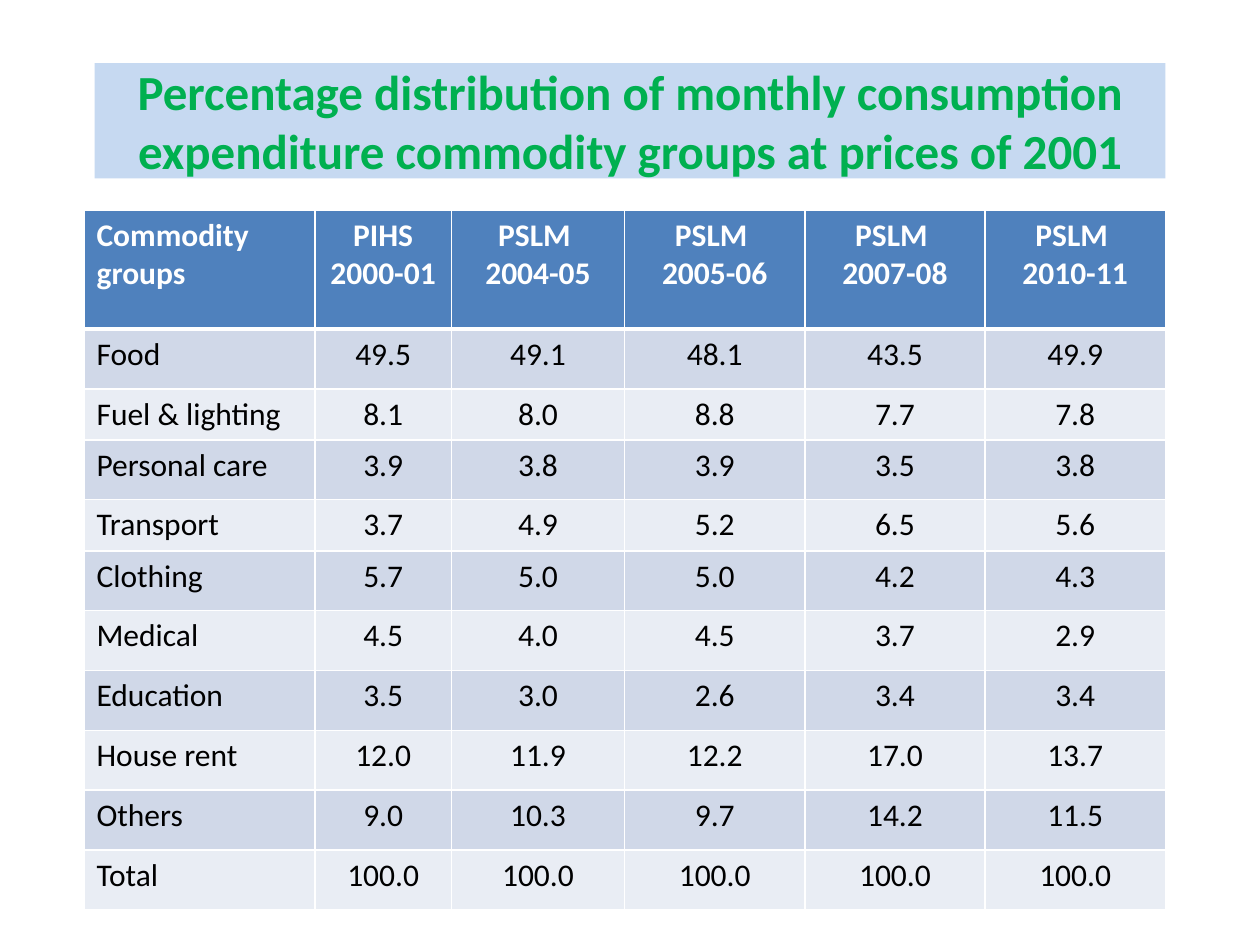
from lxml.etree import fromstring
from pptx import Presentation
from pptx.dml.color import RGBColor
from pptx.enum.text import MSO_ANCHOR, MSO_AUTO_SIZE, PP_ALIGN
from pptx.oxml.ns import nsdecls
from pptx.util import Pt

# Content
TITLE = ("Percentage distribution of monthly consumption "
         "expenditure commodity groups at prices of 2001")
HEADER = ["Commodity groups", "PIHS 2000-01", "PSLM \n2004-05",
          "PSLM \n2005-06", "PSLM \n2007-08", "PSLM \n2010-11"]
SHARES = [
    ("Food", 49.5, 49.1, 48.1, 43.5, 49.9),
    ("Fuel & lighting", 8.1, 8.0, 8.8, 7.7, 7.8),
    ("Personal care", 3.9, 3.8, 3.9, 3.5, 3.8),
    ("Transport", 3.7, 4.9, 5.2, 6.5, 5.6),
    ("Clothing", 5.7, 5.0, 5.0, 4.2, 4.3),
    ("Medical", 4.5, 4.0, 4.5, 3.7, 2.9),
    ("Education", 3.5, 3.0, 2.6, 3.4, 3.4),
    ("House rent", 12.0, 11.9, 12.2, 17.0, 13.7),
    ("Others", 9.0, 10.3, 9.7, 14.2, 11.5),
    ("Total", 100.0, 100.0, 100.0, 100.0, 100.0),
]

# Format, lengths in points
FONT = "Calibri"
WHITE = RGBColor(0xFF, 0xFF, 0xFF)
BLACK = RGBColor(0x00, 0x00, 0x00)
GREEN = RGBColor(0x00, 0xB0, 0x50)
TITLE_FILL = RGBColor(0xC6, 0xD9, 0xF1)
HEADER_FILL = RGBColor(0x4F, 0x81, 0xBD)
BAND_FILLS = [RGBColor(0xD0, 0xD8, 0xE8), RGBColor(0xE9, 0xED, 0xF4)]
COLUMN_WIDTHS = [132, 78, 99, 103, 103, 103]
HEADER_HEIGHT, ROW_HEIGHT, SHORT_HEIGHT = 68, 34.2, 29
SHORT_ROWS = {"Fuel & lighting", "Transport"}


def write_text(text_frame, text, size=18, color=BLACK, bold=False,
               alignment=PP_ALIGN.CENTER):
    text_frame.text = text
    for paragraph in text_frame.paragraphs:
        paragraph.alignment = alignment
        for run in paragraph.runs:
            font = run.font
            font.name, font.size, font.bold = FONT, Pt(size), bold
            font.color.rgb = color


def set_borders(cell, top=1, bottom=1):
    # Borders come before the fill in the cell properties
    properties = cell._tc.get_or_add_tcPr()
    sides = [("lnL", 1), ("lnR", 1), ("lnT", top), ("lnB", bottom)]
    for position, (side, width) in enumerate(sides):
        properties.insert(position, fromstring(
            f'<a:{side} {nsdecls("a")} w="{Pt(width)}"><a:solidFill>'
            f'<a:srgbClr val="{WHITE}"/></a:solidFill></a:{side}>'))


def add_title(slide):
    title = slide.shapes.title
    title.left, title.top, title.width, title.height = Pt(54), Pt(36), Pt(612), Pt(66)
    title.fill.solid()
    title.fill.fore_color.rgb = TITLE_FILL
    title.text_frame.auto_size = MSO_AUTO_SIZE.NONE
    title.text_frame.vertical_anchor = MSO_ANCHOR.MIDDLE
    write_text(title.text_frame, TITLE, size=28, color=GREEN, bold=True)


def add_share_table(slide):
    rows = [HEADER] + [[name] + [f"{share:.1f}" for share in shares]
                       for name, *shares in SHARES]
    heights = [HEADER_HEIGHT] + [SHORT_HEIGHT if name in SHORT_ROWS else ROW_HEIGHT
                                 for name, *_ in SHARES]
    table = slide.shapes.add_table(
        len(rows), len(HEADER), Pt(48), Pt(120),
        Pt(sum(COLUMN_WIDTHS)), Pt(sum(heights))).table
    for column, width in zip(table.columns, COLUMN_WIDTHS):
        column.width = Pt(width)
    for row_index, (values, height) in enumerate(zip(rows, heights)):
        table.rows[row_index].height = Pt(height)
        is_header = row_index == 0
        fill = HEADER_FILL if is_header else BAND_FILLS[(row_index - 1) % 2]
        for column_index, value in enumerate(values):
            cell = table.cell(row_index, column_index)
            cell.fill.solid()
            cell.fill.fore_color.rgb = fill
            set_borders(cell, top=3 if row_index == 1 else 1,
                        bottom=3 if is_header else 1)
            write_text(cell.text_frame, value, bold=is_header,
                       color=WHITE if is_header else BLACK,
                       alignment=PP_ALIGN.CENTER if column_index else PP_ALIGN.LEFT)


def main():
    presentation = Presentation()
    presentation.slide_width, presentation.slide_height = Pt(720), Pt(540)
    slide = presentation.slides.add_slide(presentation.slide_layouts[0])
    # The subtitle is not used
    subtitle = slide.placeholders[1].element
    subtitle.getparent().remove(subtitle)
    add_title(slide)
    add_share_table(slide)
    presentation.save("out.pptx")


if __name__ == "__main__":
    main()
